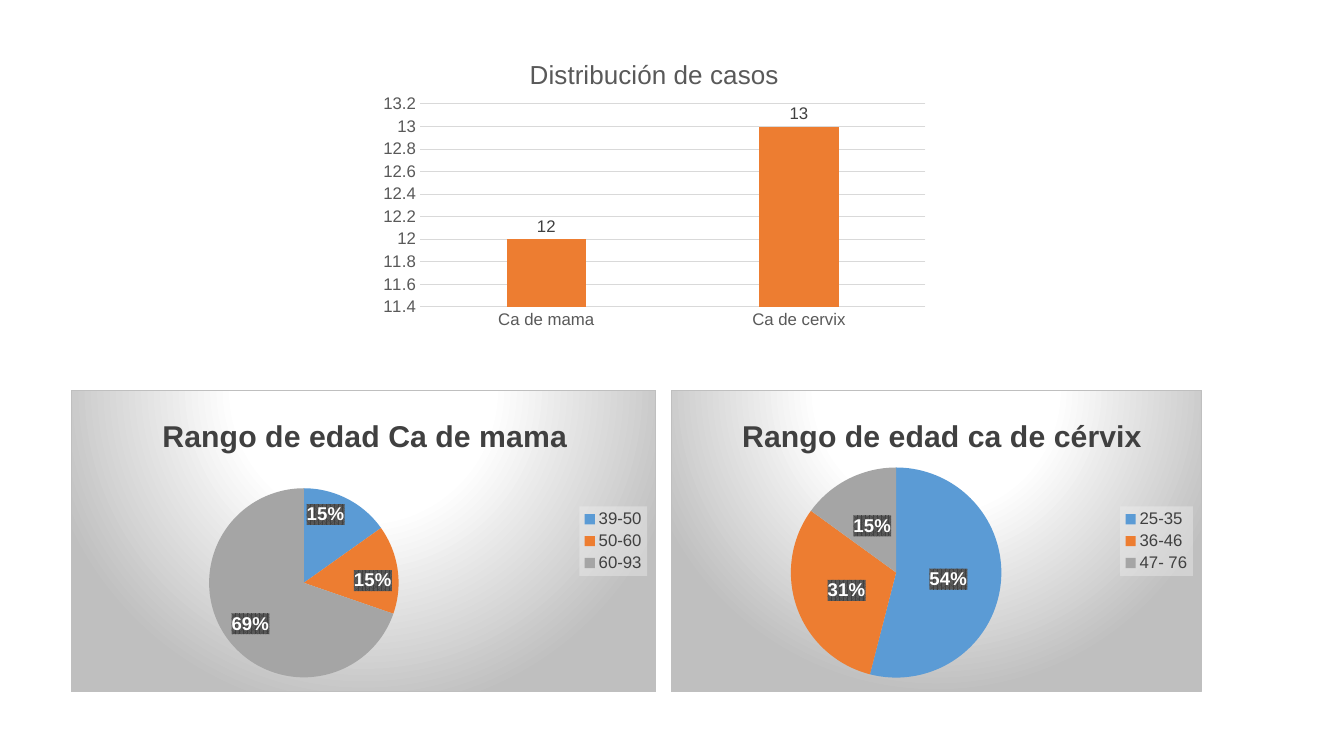
from lxml.etree import fromstring
from pptx import Presentation
from pptx.chart.data import CategoryChartData
from pptx.dml.color import RGBColor
from pptx.enum.chart import XL_CHART_TYPE, XL_LABEL_POSITION, XL_LEGEND_POSITION, XL_TICK_MARK
from pptx.oxml.ns import nsdecls, qn
from pptx.util import Inches, Pt

DARK, GREY, RULE = "404040", "595959", "D9D9D9"
BLUE, ORANGE, SILVER = "5B9BD5", "ED7D31", "A5A5A5"

PANEL = """<a:gradFill><a:gsLst>
<a:gs pos="0"><a:srgbClr val="FFFFFF"/></a:gs>
<a:gs pos="39000"><a:srgbClr val="FFFFFF"/></a:gs>
<a:gs pos="100000"><a:srgbClr val="BFBFBF"/></a:gs></a:gsLst>
<a:path path="circle"><a:fillToRect l="50000" t="-80000" r="50000" b="180000"/></a:path>
</a:gradFill><a:ln w="9525"><a:solidFill><a:srgbClr val="BFBFBF"/></a:solidFill></a:ln>"""
CLEAR = "<a:noFill/><a:ln><a:noFill/></a:ln>"
VEIL = '<a:solidFill><a:srgbClr val="F2F2F2"><a:alpha val="39000"/></a:srgbClr></a:solidFill>'
HATCH = """<a:pattFill prst="pct75"><a:fgClr><a:srgbClr val="404040"/></a:fgClr>
<a:bgClr><a:srgbClr val="595959"/></a:bgClr></a:pattFill>"""


def paint(code):
    return RGBColor.from_string(code)


def style(body):
    return fromstring(f'<c:spPr {nsdecls("c", "a")}>{body}</c:spPr>')


def frame(spot, inner=False):
    tags = [f'<c:{k}Mode val="edge"/>' for k in "xy"]
    tags += [f'<c:{k} val="{v / 100:.4f}"/>' for k, v in zip("xywh", spot)]
    if inner:
        tags.insert(0, '<c:layoutTarget val="inner"/>')
    return fromstring(
        f'<c:layout {nsdecls("c")}><c:manualLayout>{"".join(tags)}</c:manualLayout></c:layout>')


def place(part, spot, inner=False):
    for old in part.findall(qn("c:layout")):
        part.remove(old)
    if inner:
        part.insert(0, frame(spot, True))
    else:
        part.find(qn("c:overlay")).addprevious(frame(spot))


class Deck:
    def __init__(self, face="Arial"):
        self.face = face
        self.show = Presentation()
        self.show.slide_width, self.show.slide_height = Inches(13.33), Inches(7.5)
        self.slide = self.show.slides.add_slide(self.show.slide_layouts[6])

    def font(self, font, size, color, bold=False):
        font.name, font.size, font.bold = self.face, Pt(size), bold
        font.color.rgb = paint(color)

    def chart(self, kind, box, cats, vals, plot, back):
        data = CategoryChartData()
        data.categories = cats
        data.add_series("Series 1", vals)
        col, row = self.show.slide_width / 100, self.show.slide_height / 100
        rect = [int(n * unit) for n, unit in zip(box, (col, row, col, row))]
        chart = self.slide.shapes.add_chart(kind, *rect, data).chart
        self.font(chart.font, 10, "000000")
        chart.has_legend = False
        root = chart.element.find(qn("c:chart"))
        root.addnext(style(back))
        place(root.find(qn("c:plotArea")), plot, True)
        return chart

    def title(self, chart, text, spot, size, color, bold=False):
        chart.has_title = True
        para = chart.chart_title.text_frame.paragraphs[0]
        para.text = text
        self.font(para.runs[0].font, size, color, bold)
        place(chart.chart_title.element if hasattr(chart.chart_title, "element")
              else chart.element.find(".//" + qn("c:title")), spot)

    def labels(self, series, size, color, spot, bold=False, form="General"):
        tags = series.data_labels
        tags.show_value = True
        tags.number_format, tags.number_format_is_linked = form, False
        tags.position = spot
        self.font(tags.font, size, color, bold)

    def bars(self, box, text, spot, cats, vals, plot):
        chart = self.chart(XL_CHART_TYPE.COLUMN_CLUSTERED, box, cats, vals, plot, CLEAR)
        self.title(chart, text, spot, 18.6, GREY)
        group = chart.plots[0]
        group.gap_width, group.overlap, group.vary_by_categories = 219, -27, False
        fill = group.series[0].format.fill
        fill.solid()
        fill.fore_color.rgb = paint(ORANGE)
        self.labels(group.series[0], 12, DARK, XL_LABEL_POSITION.OUTSIDE_END)
        base, side = chart.category_axis, chart.value_axis
        for axis in (base, side):
            axis.major_tick_mark = axis.minor_tick_mark = XL_TICK_MARK.NONE
            self.font(axis.tick_labels.font, 12, GREY)
        side.minimum_scale, side.maximum_scale, side.major_unit = 11.4, 13.2, 0.2
        side.format.line.fill.background()
        for line in (base.format.line, side.major_gridlines.format.line):
            line.color.rgb, line.width = paint(RULE), Pt(0.75)

    def pie(self, box, text, spot, cats, vals, plot, key, where):
        chart = self.chart(XL_CHART_TYPE.PIE, box, cats, vals, plot, PANEL)
        self.title(chart, text, spot, 21.6, DARK, True)
        chart.plots[0].vary_by_categories = True
        series = chart.plots[0].series[0]
        for i, color in enumerate((BLUE, ORANGE, SILVER)):
            fill = series.points[i].format.fill
            fill.solid()
            fill.fore_color.rgb = paint(color)
        self.labels(series, 13.3, "FFFFFF", where, True, '0"%"')
        root = chart.element
        root.find(f".//{qn('c:dLbls')}/{qn('c:txPr')}").addprevious(style(HATCH))
        chart.has_legend = True
        chart.legend.position = XL_LEGEND_POSITION.RIGHT
        chart.legend.include_in_layout = False
        self.font(chart.legend.font, 12, DARK)
        part = root.find(".//" + qn("c:legend"))
        place(part, key)
        part.find(qn("c:overlay")).addnext(style(VEIL))


def main():
    deck = Deck()
    deck.bars((27.68, 4.4, 42.01, 40), "Distribución de casos", (27.1, 6.3),
              ("Ca de mama", "Ca de cervix"), (12, 13), (8.5, 23.4, 89.5, 67.1))
    deck.pie((5.25, 51.6, 43.59, 40), "Rango de edad Ca de mama", (14.7, 6.9),
             ("39-50", "50-60", "60-93"), (15, 15, 69), (23.6, 32.4, 32.4, 62.8),
             (86.9, 38.4, 11.6, 23.1), XL_LABEL_POSITION.INSIDE_END)
    deck.pie((49.89, 51.6, 39.53, 40), "Rango de edad ca de cérvix", (12.4, 6.9),
             ("25-35", "36-46", "47- 76"), (54, 31, 15), (22.6, 25.5, 39.7, 69.8),
             (84.7, 38.4, 13.7, 23.1), XL_LABEL_POSITION.CENTER)
    deck.show.save("out.pptx")


if __name__ == "__main__":
    main()
